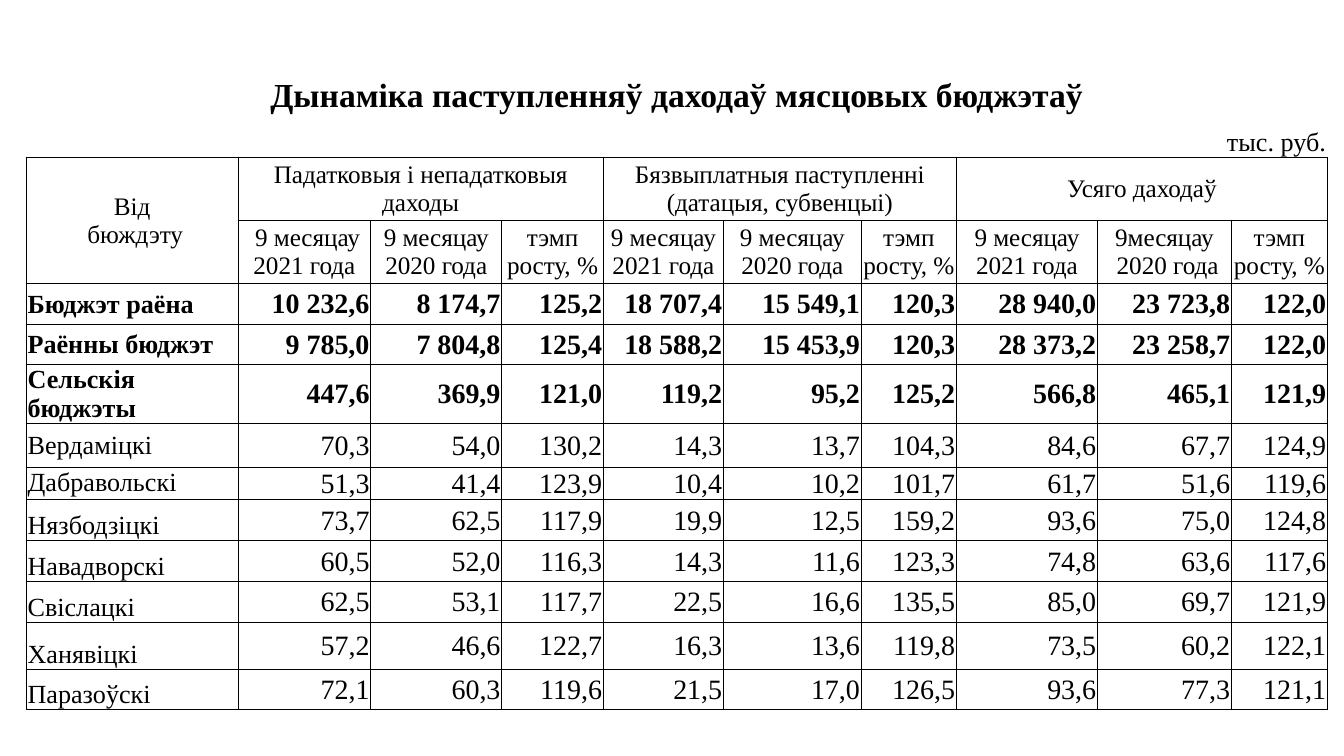
from lxml import etree
from pptx import Presentation
from pptx import util as u
from pptx.dml.color import RGBColor
from pptx.enum import text
from pptx.oxml import ns

Pt = u.Pt
BLACK = RGBColor(0x00, 0x00, 0x00)
LEFT, CENTER, RIGHT = text.PP_ALIGN.LEFT, text.PP_ALIGN.CENTER, text.PP_ALIGN.RIGHT
TOP, MIDDLE, BOTTOM = (text.MSO_ANCHOR.TOP, text.MSO_ANCHOR.MIDDLE,
                       text.MSO_ANCHOR.BOTTOM)


class Deck:
    """Style and current slide, with one method per kind of element."""
    font = "Times New Roman"
    color = BLACK
    line = 0.5
    inset = 0.7

    def __init__(self, prs):
        self.s = prs.slides.add_slide(prs.slide_layouts[6])

    def table(self, x, y, widths, heights):
        frame = self.s.shapes.add_table(len(heights), len(widths), Pt(x), Pt(y),
                                        Pt(sum(widths)), Pt(sum(heights)))
        t = frame.table
        t.first_row = t.horz_banding = False
        for col, w in zip(t.columns, widths):
            col.width = Pt(w)
        for row, h in zip(t.rows, heights):
            row.height = Pt(h)
        return t

    def borders(self, cell, sides):
        tc_pr = cell._tc.get_or_add_tcPr()
        for i, side in enumerate("LRTB"):
            ln = etree.Element(ns.qn("a:ln" + side), w=str(Pt(self.line)))
            if side in sides:
                fill = etree.SubElement(ln, ns.qn("a:solidFill"))
                etree.SubElement(fill, ns.qn("a:srgbClr"), val=str(self.color))
            else:
                etree.SubElement(ln, ns.qn("a:noFill"))
            tc_pr.insert(i, ln)

    def blank(self, cell, sides):
        cell.fill.background()
        cell.margin_left = cell.margin_right = cell.margin_top = Pt(self.inset)
        cell.margin_bottom = 0
        self.borders(cell, sides)
        self.label(cell, "", 14)

    def label(self, cell, words, size, align=LEFT, anchor=MIDDLE, bold=False):
        cell.vertical_anchor = anchor
        tf = cell.text_frame
        tf.text = words
        for p in tf.paragraphs:
            p.alignment = align
            p.font.name, p.font.size, p.font.bold = self.font, Pt(size), bold
            p.font.color.rgb = self.color


# Column widths and row heights; each value column covers one or two grid columns
WIDTHS = [113.4, 71.2, 60.2, 10, 54.4, 64.4, 15.2, 58.6, 51, 75.6, 61, 10.8, 51.4]
HEIGHTS = [23, 23, 33.8, 33.8, 21.8, 21.6, 21.6, 23.6, 17.3, 21.9, 21.9, 21.9, 25.2,
           21.6]
COLUMNS = [(1, 1), (2, 3), (4, 4), (5, 5), (6, 7), (8, 8), (9, 9), (10, 11), (12, 12)]

GROUPS = ["Падатковыя і непадатковыя даходы",
          "Бязвыплатныя паступленні (датацыя, субвенцыі)",
          "Усяго даходаў"]
GROWTH = "тэмп\nросту, %"
SUBHEADS = [" 9 месяцау 2021 года", "9 месяцау 2020 года", GROWTH,
            "9 месяцау\n2021 года", "9 месяцау 2020 года", GROWTH,
            "9 месяцау 2021 года", "9месяцау\n 2020 года", GROWTH]

# Name, anchor of the name, anchor of the values, bold, values
BUDGETS = [
    ("Бюджэт раёна", MIDDLE, MIDDLE, True,
     "10 232,6|8 174,7|125,2|18 707,4|15 549,1|120,3|28 940,0|23 723,8|122,0"),
    ("Раённы бюджэт", MIDDLE, MIDDLE, True,
     "9 785,0|7 804,8|125,4|18 588,2|15 453,9|120,3|28 373,2|23 258,7|122,0"),
    ("Сельскія бюджэты", MIDDLE, MIDDLE, True,
     "447,6|369,9|121,0|119,2|95,2|125,2|566,8|465,1|121,9"),
    ("Вердаміцкі", MIDDLE, MIDDLE, False,
     "70,3|54,0|130,2|14,3|13,7|104,3|84,6|67,7|124,9"),
    ("Дабравольскі", TOP, TOP, False,
     "51,3|41,4|123,9|10,4|10,2|101,7|61,7|51,6|119,6"),
    ("Нязбодзіцкі", BOTTOM, MIDDLE, False,
     "73,7|62,5|117,9|19,9|12,5|159,2|93,6|75,0|124,8"),
    ("Навадворскі", BOTTOM, MIDDLE, False,
     "60,5|52,0|116,3|14,3|11,6|123,3|74,8|63,6|117,6"),
    ("Свіслацкі", BOTTOM, MIDDLE, False,
     "62,5|53,1|117,7|22,5|16,6|135,5|85,0|69,7|121,9"),
    ("Ханявіцкі", BOTTOM, MIDDLE, False,
     "57,2|46,6|122,7|16,3|13,6|119,8|73,5|60,2|122,1"),
    ("Паразоўскі", BOTTOM, MIDDLE, False,
     "72,1|60,3|119,6|21,5|17,0|126,5|93,6|77,3|121,1"),
]


def main():
    prs = Presentation()
    prs.slide_width, prs.slide_height = Pt(720), Pt(405)
    deck = Deck(prs)
    t = deck.table(14.1, 38.2, WIDTHS, HEIGHTS)

    # Grid: the title and unit rows have no frame of their own
    for r in range(len(HEIGHTS)):
        sides = "" if r == 0 else "B" if r == 1 else "LRTB"
        for c in range(len(WIDTHS)):
            deck.blank(t.cell(r, c), sides)

    # Merged cells
    spans = [(0, 0, 0, 12), (1, 1, 1, 2), (1, 3, 1, 6), (1, 7, 1, 8), (1, 11, 1, 12),
             (2, 0, 3, 0)]
    spans += [(2, c, 2, c + 3) for c in (1, 5, 9)]
    spans += [(r, a, r, b) for r in range(3, len(HEIGHTS)) for a, b in COLUMNS if a < b]
    for r1, c1, r2, c2 in spans:
        t.cell(r1, c1).merge(t.cell(r2, c2))

    # Title and unit
    deck.label(t.cell(0, 0), "Дынаміка паступленняў даходаў мясцовых бюджэтаў", 18,
               CENTER, BOTTOM, True)
    deck.label(t.cell(1, 11), "тыс. руб.", 14, RIGHT, BOTTOM)

    # Column headings
    deck.label(t.cell(2, 0), "Вiд\n бюждэту", 13.5, CENTER)
    for i, group in enumerate(GROUPS):
        deck.label(t.cell(2, 1 + 4 * i), group, 13.5, CENTER)
    for (c, _), subhead in zip(COLUMNS, SUBHEADS):
        deck.label(t.cell(3, c), subhead, 13.5, CENTER)

    # Budgets
    for r, (name, name_anchor, anchor, bold, values) in enumerate(BUDGETS, 4):
        deck.label(t.cell(r, 0), name, 14, LEFT, name_anchor, bold)
        for (c, _), value in zip(COLUMNS, values.split("|")):
            deck.label(t.cell(r, c), value, 15, RIGHT, anchor, bold)

    prs.save("out.pptx")


if __name__ == "__main__":
    main()
